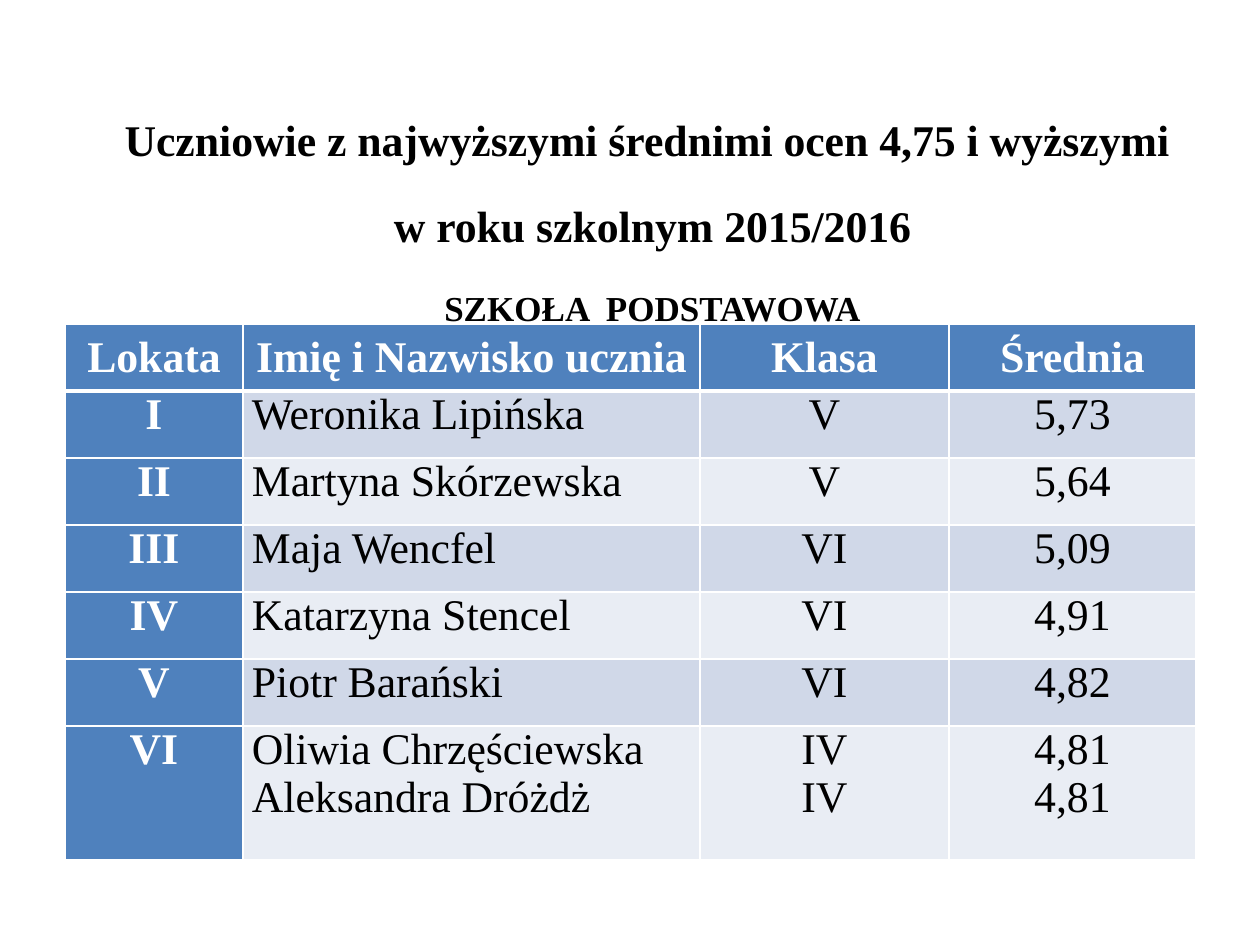
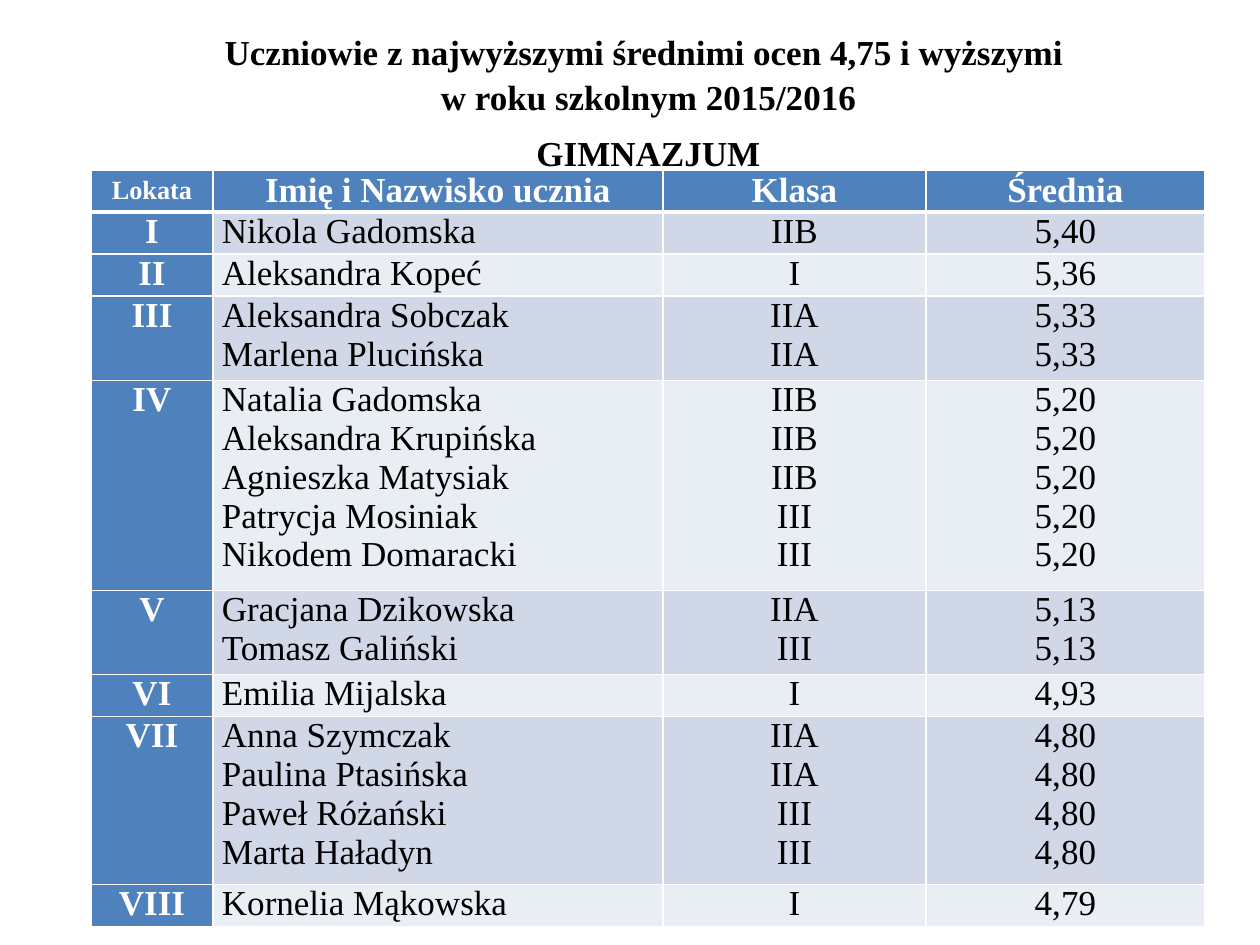
from lxml import etree
from pptx import Presentation
from pptx.dml.color import RGBColor
from pptx.enum.text import MSO_ANCHOR, PP_ALIGN
from pptx.oxml.ns import qn
from pptx.util import Emu, Pt

LEFT, CENTER = PP_ALIGN.LEFT, PP_ALIGN.CENTER
TOP, MIDDLE = MSO_ANCHOR.TOP, MSO_ANCHOR.MIDDLE

PX_PER_INCH = 126
FONT = "Times New Roman"
BLACK, WHITE, BLUE = "000000", "FFFFFF", "4F81BD"
BANDS = ("D0D8E8", "E9EDF4")

TITLE = "Uczniowie z najwyższymi średnimi ocen 4,75 i wyższymi \nw roku szkolnym 2015/2016"
HEADERS = ("Lokata", "Imię i Nazwisko ucznia", "Klasa", "Średnia")
RANKS = ("I", "II", "III", "IV", "V", "VI", "VII", "VIII")

PRIMARY = [
    ("5,73", [("Weronika Lipińska", "V")]),
    ("5,64", [("Martyna Skórzewska", "V")]),
    ("5,09", [("Maja Wencfel", "VI")]),
    ("4,91", [("Katarzyna Stencel", "VI")]),
    ("4,82", [("Piotr Barański", "VI")]),
    ("4,81", [("Oliwia Chrzęściewska", "IV"), ("Aleksandra Dróżdż", "IV")]),
]
MIDDLE_SCHOOL = [
    ("5,40", [("Nikola Gadomska", "IIB")]),
    ("5,36", [("Aleksandra Kopeć", "I")]),
    ("5,33", [("Aleksandra Sobczak", "IIA"), ("Marlena Plucińska", "IIA")]),
    ("5,20", [("Natalia Gadomska", "IIB"), ("Aleksandra Krupińska", "IIB"),
              ("Agnieszka Matysiak", "IIB"), ("Patrycja Mosiniak", "III"),
              ("Nikodem Domaracki", "III")]),
    ("5,13", [("Gracjana Dzikowska", "IIA"), ("Tomasz Galiński", "III")]),
    ("4,93", [("Emilia Mijalska", "I")]),
    ("4,80", [("Anna Szymczak", "IIA"), ("Paulina Ptasińska", "IIA"),
              ("Paweł Różański", "III"), ("Marta Haładyn", "III")]),
    ("4,79", [("Kornelia Mąkowska", "I")]),
]


def px(n):
    return Emu(round(n * 914400 / PX_PER_INCH))


def rgb(value):
    return RGBColor.from_string(value)


def write(p, text, size, color=BLACK, bold=False, align=CENTER, spacing=None, before=None):
    p.text = text
    p.alignment = align
    if spacing:
        p.line_spacing = spacing
    if before:
        p.space_before = Pt(before)
    for r in p.runs:
        r.font.name = FONT
        r.font.size = Pt(size)
        r.font.bold = bold
        r.font.color.rgb = rgb(color)


class Deck:
    def __init__(self):
        self.prs = Presentation()
        self.prs.slide_width = px(1260)
        self.prs.slide_height = px(945)
        self.s = None

    def slide(self):
        self.s = self.prs.slides.add_slide(self.prs.slide_layouts[6])

    def heading(self, box, inset, school, size, spacing, gap):
        tf = self.s.shapes.add_textbox(*map(px, box)).text_frame
        tf.word_wrap = True
        tf.vertical_anchor = TOP
        tf.margin_left = tf.margin_right = tf.margin_bottom = 0
        tf.margin_top = px(inset)
        write(tf.paragraphs[0], TITLE, size, bold=True, spacing=spacing)
        write(tf.add_paragraph(), school, 20, bold=True, before=gap)

    def cell(self, cell, lines, fill, anchor=TOP, rule=1, **fmt):
        cell.margin_left = cell.margin_right = px(9)
        cell.margin_top = cell.margin_bottom = 0
        cell.vertical_anchor = anchor
        tf = cell.text_frame
        for i, line in enumerate(lines):
            write(tf.add_paragraph() if i else tf.paragraphs[0], line, **fmt)
        tcPr = cell._tc.get_or_add_tcPr()
        for side in "LRTB":
            width = Pt(rule if side == "B" else 1)
            ln = etree.SubElement(tcPr, qn(f"a:ln{side}"), w=str(width))
            solid = etree.SubElement(ln, qn("a:solidFill"))
            etree.SubElement(solid, qn("a:srgbClr"), val=WHITE)
        cell.fill.solid()
        cell.fill.fore_color.rgb = rgb(fill)

    def ranking(self, left, top, columns, line_height, groups, size, rank_header_size):
        heights = [line_height] + [line_height * len(pupils) for _, pupils in groups]
        frame = self.s.shapes.add_table(len(heights), len(columns), px(left), px(top),
                                        px(sum(columns)), px(sum(heights)))
        table = frame.table
        for column, width in zip(table.columns, columns):
            column.width = px(width)
        for row, height in zip(table.rows, heights):
            row.height = px(height)

        for c, header in enumerate(HEADERS):
            self.cell(table.cell(0, c), [header], BLUE, MIDDLE, rule=3, color=WHITE,
                      bold=True, size=size if c else rank_header_size)
        for i, (rank, (average, pupils)) in enumerate(zip(RANKS, groups)):
            names, classes = zip(*pupils)
            self.cell(table.cell(i + 1, 0), [rank], BLUE, size=size, color=WHITE, bold=True)
            for c, lines in enumerate((names, classes, [average] * len(pupils)), 1):
                self.cell(table.cell(i + 1, c), lines, BANDS[i % 2], size=size,
                          align=LEFT if c == 1 else CENTER)


def main():
    deck = Deck()
    deck.slide()
    deck.heading((105, 42, 1095, 285), 38, "SZKOŁA  PODSTAWOWA", 25, 1.63, 20)
    deck.ranking(65, 324, (178, 457, 249, 247), 67, PRIMARY, 25, 25)

    deck.slide()
    deck.heading((209, 16, 879, 150), 11, "GIMNAZJUM", 20, 1.08, 8)
    deck.ranking(91, 170, (122, 450, 263, 279), 42, MIDDLE_SCHOOL, 20, 15)
    deck.prs.save("out.pptx")


if __name__ == "__main__":
    main()
